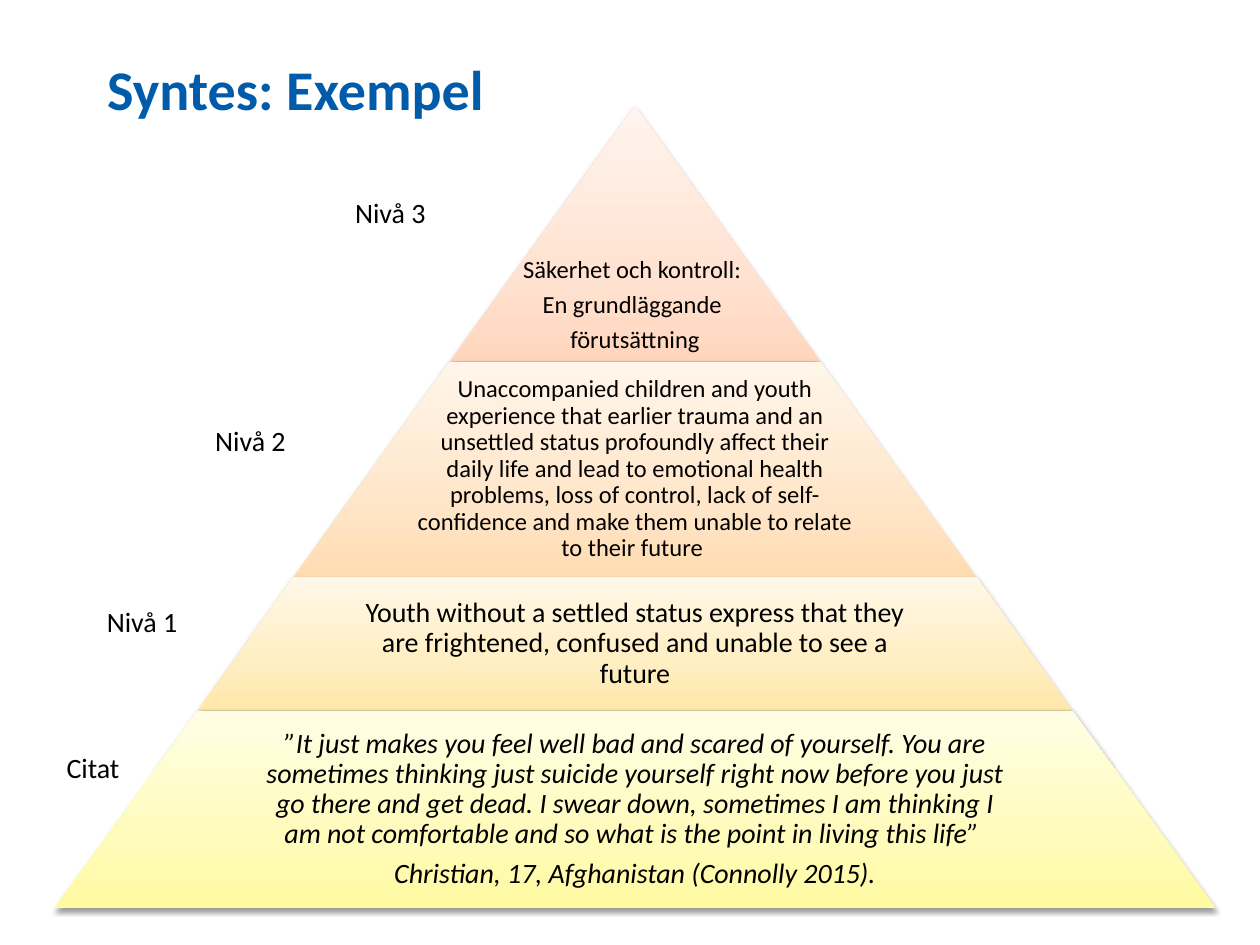
from lxml import etree
from pptx import Presentation
from pptx.dml.color import RGBColor
from pptx.enum import text
from pptx.oxml import parse_xml
from pptx.oxml.ns import nsdecls, qn
from pptx.util import Pt

PX = 9144  # EMU per px, 100 px to the inch
FONT = "Calibri"
COLORS = {"title": "005CAA", "text": "000000", "shadow": "000000"}
APEX, TOP, BASE, HALF = 504, 84, 721, 461

# label, label left and top, bottom edge, size, italic, gradient, paragraphs
TIERS = [
    ("Nivå 3", 272, 150, 287, 14, False, ("FFD6BD", "FFE2D1", "FFF4EE"),
     ["Säkerhet och kontroll: ", "En grundläggande ", "förutsättning"]),
    ("Nivå 2", 161, 331, 458, 14, False, ("FFDCB2", "FFE6C9", "FFF5EA"),
     ["Unaccompanied children and youth experience that earlier trauma and an "
      "unsettled status profoundly affect their daily life and lead to emotional "
      "health problems, loss of control, lack of self-confidence and make them "
      "unable to relate to their future "]),
    ("Nivå 1", 75, 475, 564, 16, False, ("FFE7A8", "FFEEC2", "FFF8E8"),
     ["Youth without a settled status express that they are frightened, "
      "confused and unable to see a future"]),
    ("Citat", 43, 591, BASE, 16, True, ("FFFA9F", "FFFBBB", "FFFEE5"),
     ["”It just makes you feel well bad and scared of yourself. You are sometimes "
      "thinking just suicide yourself right now before you just go there and get "
      "dead. I swear down, sometimes I am thinking I am not comfortable and so "
      "what is the point in living this life” ",
      "Christian, 17, Afghanistan (Connolly 2015)."]),
]


def style(par, size, color="text", bold=False, italic=False):
    for run in par.runs:
        font = run.font
        font.name, font.size = FONT, Pt(size)
        font.bold, font.italic = bold, italic
        font.color.rgb = RGBColor.from_string(COLORS[color])


def add_title(slide, left, top, width, height):
    title = slide.shapes.title
    title.left, title.top = left * PX, top * PX
    title.width, title.height = width * PX, height * PX
    frame = title.text_frame
    frame.text = "Syntes: Exempel"
    frame.vertical_anchor = text.MSO_ANCHOR.TOP
    frame.margin_top = 7 * PX
    frame.paragraphs[0].alignment = text.PP_ALIGN.LEFT
    style(frame.paragraphs[0], 32, "title", bold=True)


def add_label(slide, words, left, top):
    box = slide.shapes.add_textbox(left * PX, top * PX, 134 * PX, 37 * PX)
    box.text_frame.word_wrap = True
    box.text_frame.text = words
    style(box.text_frame.paragraphs[0], 16)


def paint(shape, shades):
    """Give the shape a three-stop upward gradient and a soft shadow below."""
    shape.line.fill.background()
    stops = "".join(f'<a:gs pos="{pos}000"><a:srgbClr val="{shade}"/></a:gs>'
                    for pos, shade in zip((0, 35, 100), shades))
    grad = parse_xml(f'<a:gradFill {nsdecls("a")} rotWithShape="1"><a:gsLst>{stops}'
                     '</a:gsLst><a:lin ang="16200000" scaled="0"/></a:gradFill>')
    props = shape.fill._xPr
    props.find(qn("a:custGeom")).addnext(grad)
    shape.shadow.inherit = False
    shade = etree.SubElement(props.find(qn("a:effectLst")), qn("a:outerShdw"),
                             blurRad=str(Pt(3.1)), dist=str(Pt(1.6)),
                             dir="5400000", rotWithShape="0")
    color = etree.SubElement(shade, qn("a:srgbClr"), val=COLORS["shadow"])
    etree.SubElement(color, qn("a:alpha"), val="38000")


def add_tier(slide, top, base, size, italic, shades, lines):
    """Draw the slice of the pyramid that lies between two heights."""
    upper, lower = (round((y - TOP) * HALF / (BASE - TOP)) for y in (top, base))
    build = slide.shapes.build_freeform(APEX - lower, base, scale=PX)
    build.add_line_segments([(APEX - upper, top), (APEX + upper, top),
                             (APEX + lower, base)], close=True)
    shape = build.convert_to_shape()
    paint(shape, shades)

    peak = upper == 0
    frame = shape.text_frame
    frame.word_wrap = True
    frame.vertical_anchor = text.MSO_ANCHOR.BOTTOM if peak else text.MSO_ANCHOR.MIDDLE
    side = 2 if peak else round(0.177 * 2 * lower)
    frame.margin_left = frame.margin_right = side * PX
    frame.margin_top = 2 * PX
    frame.margin_bottom = (6 if peak else 2) * PX
    frame.text = "\n".join(lines)
    for par in frame.paragraphs:
        par.alignment = text.PP_ALIGN.CENTER
        par.line_spacing = 0.9
        par.space_after = Pt(0.35 * size)
        style(par, size, italic=italic)


def main():
    deck = Presentation()
    deck.slide_width, deck.slide_height = 1000 * PX, 750 * PX
    slide = deck.slides.add_slide(deck.slide_layouts[5])
    add_title(slide, 75, 36, 803, 79)
    top = TOP
    for label, left, mid, base, *look in TIERS:
        add_tier(slide, top, base, *look)
        add_label(slide, label, left, mid)
        top = base
    deck.save("out.pptx")


if __name__ == "__main__":
    main()
